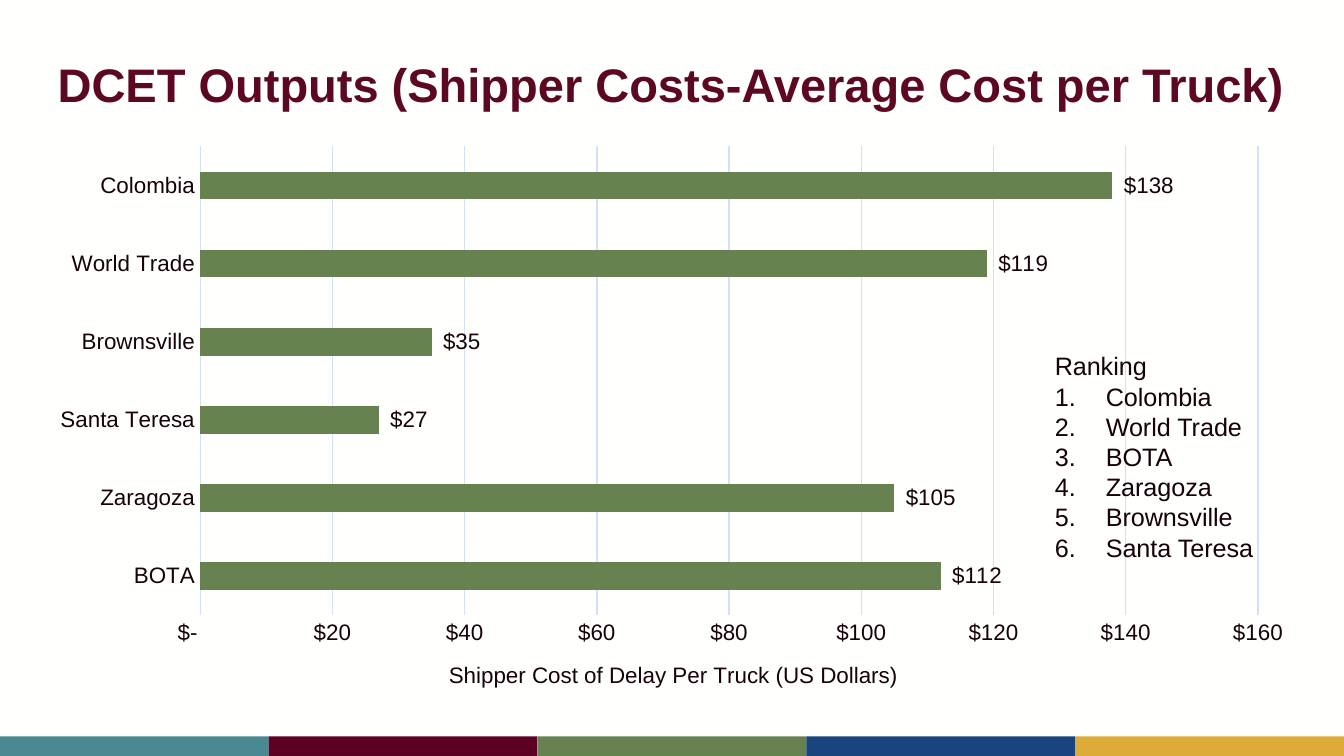
from dataclasses import dataclass

import pptx
import pptx.chart.data
import pptx.dml.color
import pptx.enum.chart
import pptx.enum.shapes
import pptx.enum.text
import pptx.oxml
import pptx.oxml.ns
import pptx.util
from pptx.util import Inches


@dataclass(frozen=True)
class Theme:
    font: str = "Arial"
    back: str = "FFFFFE"
    ink: str = "160208"
    head: str = "5C0823"
    bar: str = "678250"
    grid: str = "D2E1F6"
    bands: tuple = ("4B8992", "5C0024", "678250", "19447E", "DDAB37")
    head_size: float = 25.2
    list_size: float = 13.5
    chart_size: float = 12


@dataclass(frozen=True)
class Box:
    left: float
    top: float
    width: float
    height: float

    def emu(self) -> tuple:
        return tuple(Inches(v) for v in (self.left, self.top, self.width, self.height))


@dataclass(frozen=True)
class Cost:
    port: str
    value: int


THEME = Theme()
WIDTH = 10
HEIGHT = WIDTH * 9 / 16
CHART = Box(0.26, 1, 9.52, 4.33)
PLOT = Box(1.49, 1.09, 7.87, 3.49)
LABEL = (3.31, 4.89)
MONEY = '_("$"* #,##0_);_("$"* \\(#,##0\\);_("$"* "-"??_);_(@_)'
COSTS = (
    Cost("BOTA", 112),
    Cost("Zaragoza", 105),
    Cost("Santa Teresa", 27),
    Cost("Brownsville", 35),
    Cost("World Trade", 119),
    Cost("Colombia", 138),
)


def rgb(code: str) -> pptx.dml.color.RGBColor:
    return pptx.dml.color.RGBColor.from_string(code)


def style(font, size: float, color: str = THEME.ink, bold: bool = False) -> None:
    font.name = THEME.font
    font.size = pptx.util.Pt(size)
    font.bold = bold
    font.color.rgb = rgb(color)


def paint(fill, color: str) -> None:
    fill.solid()
    fill.fore_color.rgb = rgb(color)


def rule(line) -> None:
    line.color.rgb = rgb(THEME.grid)
    line.width = pptx.util.Pt(0.75)


def layout(**parts):
    """Make a manual chart layout from tag values."""
    space = pptx.oxml.ns.nsdecls("c")
    tags = "".join(f'<c:{tag} val="{val}"/>' for tag, val in parts.items())
    return pptx.oxml.parse_xml(
        f"<c:layout {space}><c:manualLayout>{tags}</c:manualLayout></c:layout>"
    )


def share(left: float, top: float) -> dict:
    """Give a slide point as fractions of the chart."""
    return {
        "x": round((left - CHART.left) / CHART.width, 4),
        "y": round((top - CHART.top) / CHART.height, 4),
    }


def add_bands(slide) -> None:
    step = WIDTH / len(THEME.bands)
    for place, color in enumerate(THEME.bands):
        box = Box(place * step, 5.48, step, 0.15)
        band = slide.shapes.add_shape(
            pptx.enum.shapes.MSO_SHAPE.RECTANGLE, *box.emu()
        )
        band.shadow.inherit = False
        paint(band.fill, color)
        band.line.fill.background()


def add_text(slide, box: Box, text: str):
    frame = slide.shapes.add_textbox(*box.emu()).text_frame
    frame.word_wrap = True
    frame.text = text
    return frame


def add_title(slide) -> None:
    text = "DCET Outputs (Shipper Costs-Average Cost per Truck)"
    frame = add_text(slide, Box(0.33, 0.3, 9.35, 0.7), text)
    frame.vertical_anchor = pptx.enum.text.MSO_ANCHOR.MIDDLE
    line = frame.paragraphs[0]
    line.line_spacing = 0.9
    style(line.runs[0].font, THEME.head_size, THEME.head, True)


def add_ranks(slide) -> None:
    ranked = sorted(COSTS, key=lambda cost: -cost.value)
    text = "\n".join(["Ranking"] + [cost.port for cost in ranked])
    frame = add_text(slide, Box(7.75, 2.56, 2.1, 1.92), text)
    for place, line in enumerate(frame.paragraphs):
        if place:
            props = line._p.get_or_add_pPr()
            props.set("marL", str(Inches(0.38)))
            props.set("indent", str(-Inches(0.38)))
            space = pptx.oxml.ns.nsdecls("a")
            props.append(pptx.oxml.parse_xml(
                f'<a:buAutoNum {space} type="arabicPeriod"/>'
            ))
        style(line.runs[0].font, THEME.list_size)


def add_chart(slide) -> None:
    data = pptx.chart.data.CategoryChartData()
    data.categories = [cost.port for cost in COSTS]
    data.add_series("Series 1", [cost.value for cost in COSTS])
    kinds = pptx.enum.chart
    chart = slide.shapes.add_chart(
        kinds.XL_CHART_TYPE.BAR_CLUSTERED, *CHART.emu(), data
    ).chart
    chart.has_legend = False
    chart.has_title = False
    style(chart.font, THEME.chart_size)

    for axis in (chart.category_axis, chart.value_axis):
        axis.major_tick_mark = kinds.XL_TICK_MARK.NONE
        axis.minor_tick_mark = kinds.XL_TICK_MARK.NONE
        style(axis.tick_labels.font, THEME.chart_size)
    rule(chart.category_axis.format.line)

    scale = chart.value_axis
    scale.minimum_scale, scale.maximum_scale, scale.major_unit = 0, 160, 20
    scale.format.line.fill.background()
    rule(scale.major_gridlines.format.line)
    scale.tick_labels.number_format = MONEY
    scale.tick_labels.number_format_is_linked = False
    title = scale.axis_title
    title.text_frame.text = "Shipper Cost of Delay Per Truck (US Dollars)"
    style(title.text_frame.paragraphs[0].runs[0].font, THEME.chart_size)
    node = title._element
    for old in node.findall(pptx.oxml.ns.qn("c:layout")):
        node.remove(old)
    spot = layout(xMode="edge", yMode="edge", **share(*LABEL))
    node.find(pptx.oxml.ns.qn("c:tx")).addnext(spot)

    plot = chart.plots[0]
    plot.gap_width = 182
    plot.vary_by_categories = False
    paint(plot.series[0].format.fill, THEME.bar)
    plot.has_data_labels = True
    labels = plot.data_labels
    labels.show_value = True
    labels.position = kinds.XL_LABEL_POSITION.OUTSIDE_END
    labels.number_format = MONEY
    labels.number_format_is_linked = False
    style(labels.font, THEME.chart_size)

    area = chart._chartSpace.chart.plotArea
    for old in area.findall(pptx.oxml.ns.qn("c:layout")):
        area.remove(old)
    area.insert(0, layout(
        layoutTarget="inner", xMode="edge", yMode="edge",
        **share(PLOT.left, PLOT.top),
        w=round(PLOT.width / CHART.width, 4),
        h=round(PLOT.height / CHART.height, 4),
    ))


def main() -> None:
    deck = pptx.Presentation()
    deck.slide_width, deck.slide_height = Inches(WIDTH), Inches(HEIGHT)
    slide = deck.slides.add_slide(deck.slide_layouts[6])
    paint(slide.background.fill, THEME.back)
    add_bands(slide)
    add_title(slide)
    add_chart(slide)
    add_ranks(slide)
    deck.save("out.pptx")


if __name__ == "__main__":
    main()
